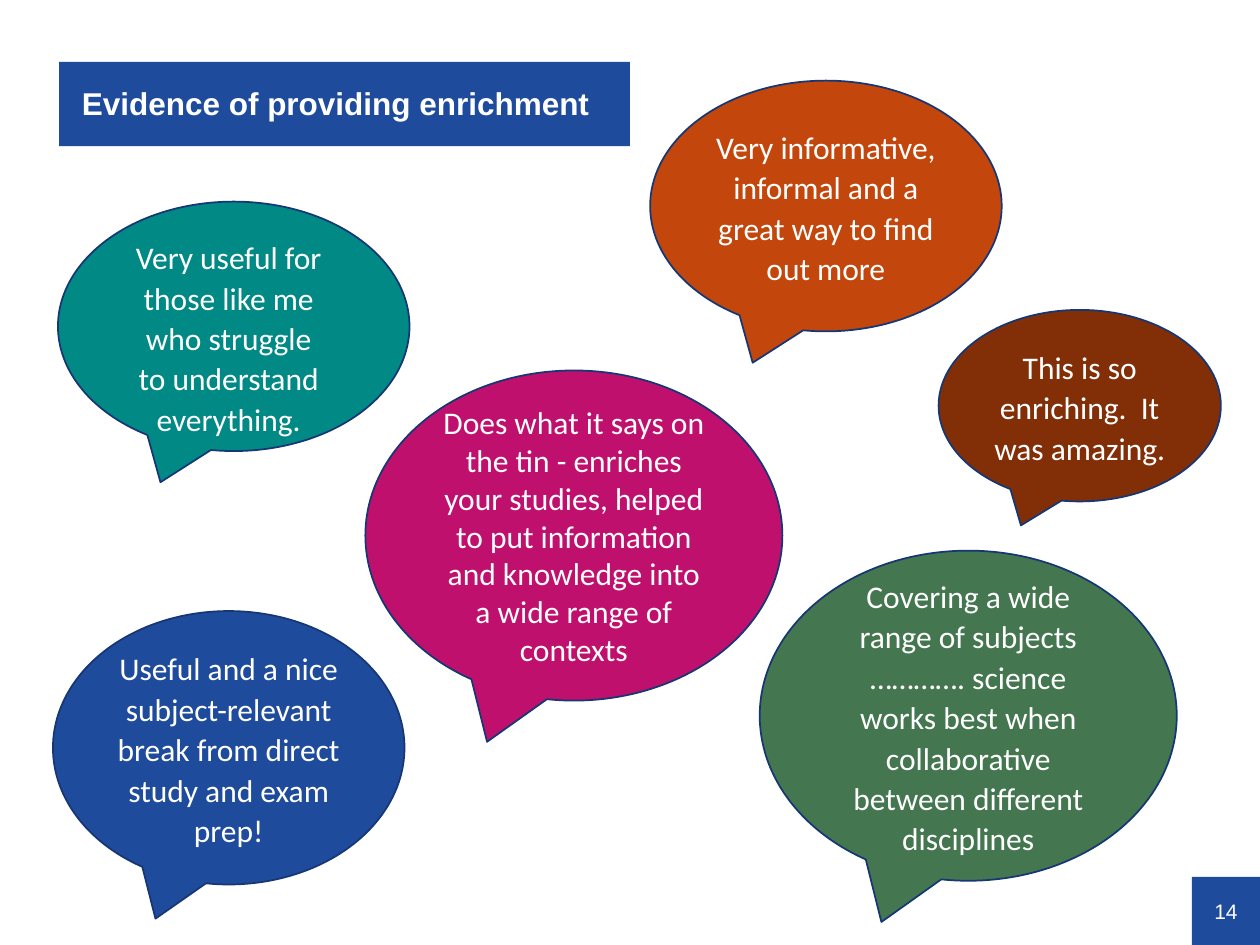
import pptx
import pptx.util
import pptx.dml.color
import pptx.enum.shapes
import pptx.enum.text

Inches = pptx.util.Inches
Pt = pptx.util.Pt
RGBColor = pptx.dml.color.RGBColor
Shape = pptx.enum.shapes.MSO_SHAPE
Align = pptx.enum.text.PP_ALIGN
Anchor = pptx.enum.text.MSO_ANCHOR

BLUE = RGBColor(0x1E, 0x4B, 0x9B)
NAVY = RGBColor(0x16, 0x37, 0x73)
PINK = RGBColor(0xC0, 0x10, 0x6E)
ORANGE = RGBColor(0xC3, 0x47, 0x0C)
BROWN = RGBColor(0x82, 0x2F, 0x08)
TEAL = RGBColor(0x00, 0x89, 0x85)
GREEN = RGBColor(0x44, 0x76, 0x50)
WHITE = RGBColor(0xFF, 0xFF, 0xFF)

TITLE = "Evidence of providing enrichment"
NUMBER = "14"
LOOSE = {"line": 1.07, "after": 8}
QUOTES = [
    ("Useful and a nice subject-relevant break from direct study and exam prep!",
     (0.42, 4.85, 2.79, 2.17), BLUE, LOOSE),
    ("Does what it says on the tin - enriches your studies, helped to put "
     "information and knowledge into a wide range of contexts",
     (2.9, 2.94, 3.31, 2.62), PINK, {}),
    ("Very informative, informal and a great way to find out more",
     (5.16, 0.64, 2.79, 1.99), ORANGE, LOOSE),
    ("This is so enriching.  It was amazing.",
     (7.45, 2.46, 2.24, 1.52), BROWN, LOOSE),
    ("", (0.46, 1.6, 2.79, 1.98), TEAL, LOOSE),
    ("Covering a wide range of subjects …………. science works best when "
     "collaborative between different disciplines",
     (6.03, 4.37, 3.31, 2.62), GREEN, LOOSE),
]
USEFUL = "Very useful for those like me who struggle to understand everything."
USEFUL_BOX = (0.94, 1.82, 1.75, 1.71)


def write(shape, text, font="Calibri", size=18, bold=False, align=Align.CENTER,
          anchor=Anchor.MIDDLE, line=1.0, after=0, inset=None):
    frame = shape.text_frame
    frame.word_wrap = True
    frame.auto_size = pptx.enum.text.MSO_AUTO_SIZE.NONE
    frame.vertical_anchor = anchor
    if inset:
        (frame.margin_left, frame.margin_top,
         frame.margin_right, frame.margin_bottom) = map(Inches, inset)
    para = frame.paragraphs[0]
    para.alignment = align
    para.line_spacing = line
    para.space_before = Pt(0)
    para.space_after = Pt(after)
    run = para.add_run()
    run.text = text
    run.font.name = font
    run.font.size = Pt(size)
    run.font.bold = bold
    run.font.color.rgb = WHITE


def paint(shape, fill, edge=None):
    shape.fill.solid()
    shape.fill.fore_color.rgb = fill
    if edge is None:
        shape.line.fill.background()
    else:
        shape.line.color.rgb = edge
        shape.line.width = Pt(1)


def draw(slide, kind, box, fill, edge=None):
    shape = slide.shapes.add_shape(kind, *map(Inches, box))
    shape.shadow.inherit = False
    paint(shape, fill, edge)
    return shape


def main():
    deck = pptx.Presentation()
    deck.slide_width, deck.slide_height = Inches(10), Inches(7.5)
    slide = deck.slides.add_slide(deck.slide_layouts[5])

    title = slide.shapes.title
    title.left, title.top = Inches(0.47), Inches(0.49)
    title.width, title.height = Inches(4.53), Inches(0.67)
    paint(title, BLUE)
    write(title, TITLE, font="Arial", bold=True, align=Align.LEFT,
          line=0.9, inset=(0.18, 0.02, 0, 0))

    badge = draw(slide, Shape.RECTANGLE, (9.46, 6.96, 0.54, 0.54), BLUE)
    write(badge, NUMBER, font="Arial", size=12, inset=(0, 0, 0, 0))

    for text, box, fill, style in QUOTES:
        bubble = draw(slide, Shape.OVAL_CALLOUT, box, fill, NAVY)
        if text:
            write(bubble, text, **style)

    useful = slide.shapes.add_textbox(*map(Inches, USEFUL_BOX))
    write(useful, USEFUL, anchor=Anchor.TOP, **LOOSE)

    deck.save("out.pptx")


if __name__ == "__main__":
    main()
